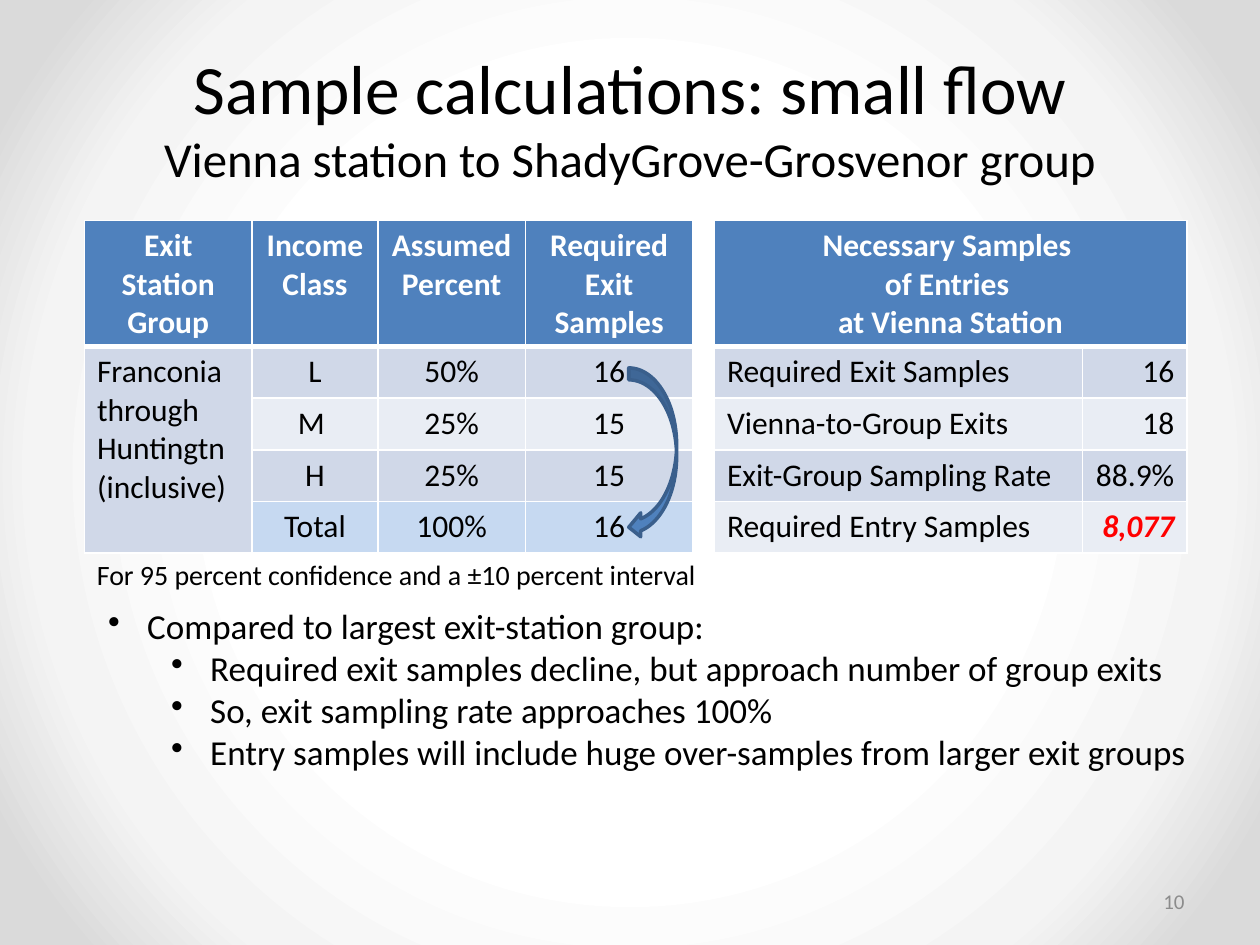
"""Build a slide of sample calculations for a small station-to-station flow."""
from dataclasses import dataclass

import lxml.etree
import pptx
import pptx.dml.color
import pptx.enum.shapes
import pptx.enum.text
import pptx.oxml.ns
import pptx.util

Inches = pptx.util.Inches
Align = pptx.enum.text.PP_ALIGN
Anchor = pptx.enum.text.MSO_ANCHOR
qn = pptx.oxml.ns.qn


@dataclass(frozen=True)
class Theme:
    font: str = "Calibri"
    black: str = "000000"
    white: str = "FFFFFF"
    red: str = "FF0000"
    grey: str = "8C8C8C"
    blue: str = "4F81BD"
    dark_blue: str = "3A5F8C"
    total: str = "C6D9F1"
    bands: tuple = ("D0D8E8", "E9EDF4")
    backdrop: tuple = ((50, "FFFFFF"), (76, "F4F4F4"), (92, "DADADA"))
    title_size: float = 39.6
    subtitle_size: float = 27.9
    bullet_size: int = 20
    table_size: int = 18
    note_size: int = 16
    number_size: int = 12


THEME = Theme()


def rgb(value):
    return pptx.dml.color.RGBColor.from_string(value)


def style_font(font, size, color=THEME.black, bold=False, italic=False):
    font.name = THEME.font
    font.size = pptx.util.Pt(size)
    font.bold = bold
    font.italic = italic
    font.color.rgb = rgb(color)


def set_background(slide):
    fill = slide.background.fill
    fill.gradient()
    gradient = slide.background._cSld.find(".//" + qn("a:gradFill"))
    for child in list(gradient):
        gradient.remove(child)
    stops = lxml.etree.SubElement(gradient, qn("a:gsLst"))
    for position, color in THEME.backdrop:
        stop = lxml.etree.SubElement(stops, qn("a:gs"), pos=str(position * 1000))
        lxml.etree.SubElement(stop, qn("a:srgbClr"), val=color)
    circle = lxml.etree.SubElement(gradient, qn("a:path"), path="circle")
    center = {side: "50000" for side in "ltrb"}
    lxml.etree.SubElement(circle, qn("a:fillToRect"), **center)


def add_text(slide, box, lines, size, color=THEME.black, align=Align.LEFT,
             anchor=Anchor.TOP):
    shape = slide.shapes.add_textbox(*map(Inches, box))
    frame = shape.text_frame
    frame.word_wrap = True
    frame.vertical_anchor = anchor
    frame.text = "\n".join(lines)
    for paragraph in frame.paragraphs:
        paragraph.alignment = align
        style_font(paragraph.font, size, color)
    return frame


def add_title(slide, title, subtitle):
    frame = add_text(slide, (0.5, 0.3, 9, 1.25), [title + "\v" + subtitle],
                     THEME.title_size, align=Align.CENTER, anchor=Anchor.MIDDLE)
    sizes = (THEME.title_size, THEME.subtitle_size)
    for run, size in zip(frame.paragraphs[0].runs, sizes):
        style_font(run.font, size)


def add_bullets(slide, box, items):
    frame = add_text(slide, box, [text for _, text in items], THEME.bullet_size)
    for paragraph, (level, _) in zip(frame.paragraphs, items):
        paragraph.level = level
        properties = paragraph._p.get_or_add_pPr()
        properties.set("marL", str(Inches(0.31 + 0.5 * level)))
        properties.set("indent", str(Inches(-0.31)))
        bullet = lxml.etree.Element(qn("a:buChar"), char="•")
        properties.insert(0, bullet)


def set_borders(cell, bottom):
    properties = cell._tc.get_or_add_tcPr()
    for side, width in (("L", 1), ("R", 1), ("T", 1), ("B", bottom)):
        line = lxml.etree.SubElement(properties, qn("a:ln" + side),
                                     w=str(pptx.util.Pt(width)))
        fill = lxml.etree.SubElement(line, qn("a:solidFill"))
        lxml.etree.SubElement(fill, qn("a:srgbClr"), val=THEME.white)


def style_cell(cell, header, fill, align):
    set_borders(cell, 3 if header else 1)
    cell.fill.solid()
    cell.fill.fore_color.rgb = rgb(fill)
    for paragraph in cell.text_frame.paragraphs:
        paragraph.alignment = align
        style_font(paragraph.font, THEME.table_size,
                   THEME.white if header else THEME.black, bold=header)


def add_table(slide, left, widths, rows, last_align):
    heights = [0.99] + [0.41] * (len(rows) - 1)
    box = map(Inches, (left, 1.75, sum(widths), sum(heights)))
    table = slide.shapes.add_table(len(rows), len(widths), *box).table
    for column, width in zip(table.columns, widths):
        column.width = Inches(width)
    for row, height in zip(table.rows, heights):
        row.height = Inches(height)
    for r, row in enumerate(rows):
        for c, text in enumerate(row):
            cell = table.cell(r, c)
            cell.text = text
            fill = THEME.bands[(r - 1) % 2] if r else THEME.blue
            align = Align.CENTER if r == 0 else last_align if c else Align.LEFT
            style_cell(cell, r == 0, fill, align)
    return table


def add_exit_table(slide):
    rows = [
        ("Exit Station Group", "Income Class", "Assumed Percent",
         "Required Exit Samples"),
        ("Franconia through Huntingtn\n(inclusive)", "L", "50%", "16"),
        ("", "M ", "25%", "15"),
        ("", "H", "25%", "15"),
        ("", "Total", "100%", "16"),
    ]
    table = add_table(slide, 0.67, (1.33, 1, 1.17, 1.33), rows, Align.CENTER)
    table.cell(1, 0).merge(table.cell(4, 0))
    for column in range(1, 4):
        table.cell(4, column).fill.fore_color.rgb = rgb(THEME.total)


def add_entry_table(slide):
    rows = [
        ("Necessary Samples \nof Entries \nat Vienna Station", ""),
        ("Required Exit Samples", "16"),
        ("Vienna-to-Group Exits", "18"),
        ("Exit-Group Sampling Rate", "88.9%"),
        ("Required Entry Samples", "8,077"),
    ]
    table = add_table(slide, 5.67, (2.92, 0.83), rows, Align.RIGHT)
    table.cell(0, 0).merge(table.cell(0, 1))
    result = table.cell(4, 1).text_frame.paragraphs[0]
    style_font(result.font, THEME.table_size, THEME.red, bold=True, italic=True)


def add_curved_arrow(slide, box):
    kind = pptx.enum.shapes.MSO_SHAPE.CURVED_LEFT_ARROW
    shape = slide.shapes.add_shape(kind, *map(Inches, box))
    shape.shadow.inherit = False
    shape.fill.solid()
    shape.fill.fore_color.rgb = rgb(THEME.blue)
    shape.line.color.rgb = rgb(THEME.dark_blue)
    shape.line.width = pptx.util.Pt(2)


def main():
    presentation = pptx.Presentation()
    presentation.slide_width = Inches(10)
    presentation.slide_height = Inches(7.5)
    slide = presentation.slides.add_slide(presentation.slide_layouts[6])
    set_background(slide)
    add_title(slide, "Sample calculations: small flow",
              "Vienna station to ShadyGrove-Grosvenor group")
    add_text(slide, (7.17, 6.95, 2.33, 0.4), ["10"], THEME.number_size,
             THEME.grey, Align.RIGHT, Anchor.MIDDLE)
    add_exit_table(slide)
    add_curved_arrow(slide, (4.99, 2.92, 0.38, 1.36))
    add_entry_table(slide)
    add_text(slide, (0.67, 4.38, 6.25, 0.37),
             ["For 95 percent confidence and a ±10 percent interval"],
             THEME.note_size)
    add_bullets(slide, (0.76, 4.75, 9.08, 1.78), [
        (0, "Compared to largest exit-station group:"),
        (1, "Required exit samples decline, but approach number of group exits"),
        (1, "So, exit sampling rate approaches 100%"),
        (1, "Entry samples will include huge over-samples from larger exit groups"),
    ])
    presentation.save("out.pptx")


if __name__ == "__main__":
    main()
